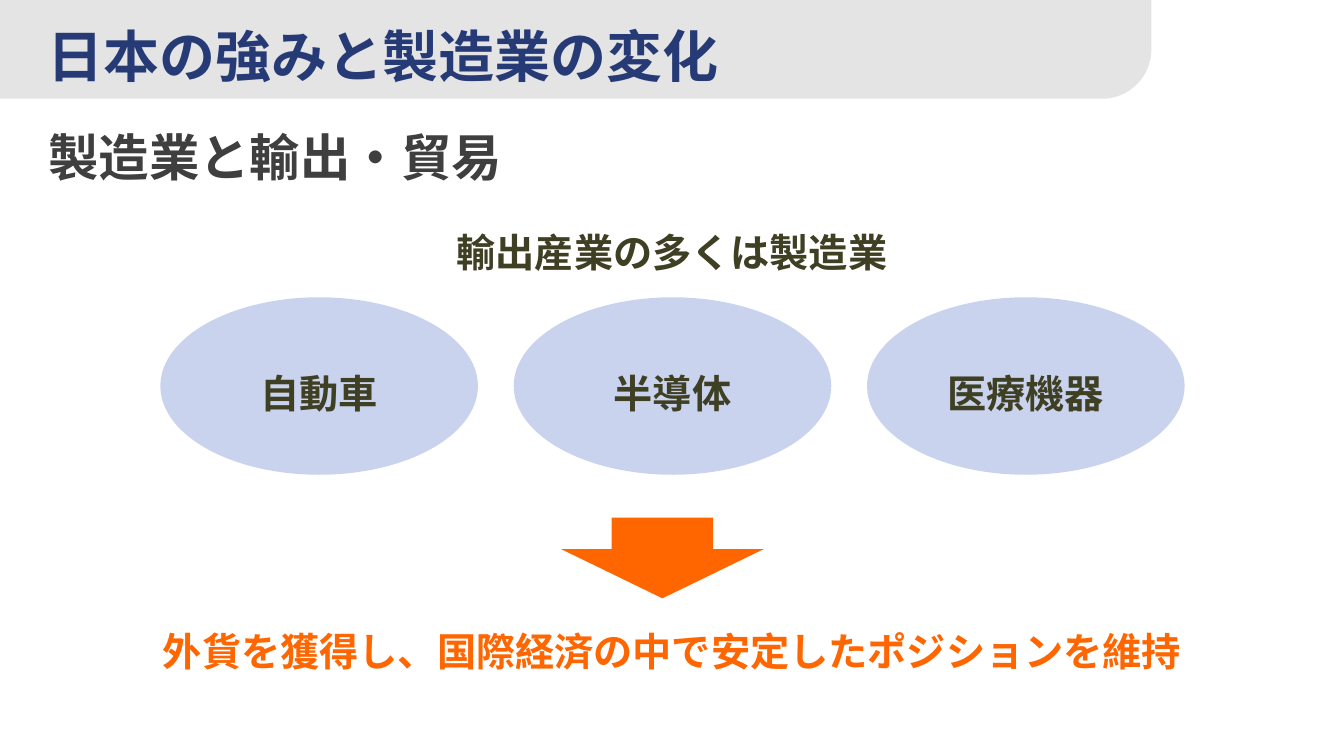
from lxml.etree import SubElement
from pptx import Presentation
from pptx.dml.color import RGBColor
from pptx.enum.shapes import MSO_SHAPE
from pptx.enum.text import MSO_AUTO_SIZE, PP_ALIGN
from pptx.oxml.ns import qn
from pptx.util import Inches, Pt

SLIDE_WIDTH = Inches(13.33)
SLIDE_HEIGHT = Inches(7.5)
FONT_NAME = "Noto Sans CJK JP"

BAND_GREY = RGBColor(0xE4, 0xE4, 0xE4)
TITLE_NAVY = RGBColor(0x26, 0x3B, 0x75)
HEADING_GREY = RGBColor(0x3F, 0x3F, 0x3F)
BODY_OLIVE = RGBColor(0x3F, 0x3F, 0x24)
OVAL_BLUE = RGBColor(0xC9, 0xD3, 0xEE)
ACCENT_ORANGE = RGBColor(0xFF, 0x66, 0x00)

INDUSTRIES = ["自動車", "半導体", "医療機器"]
OVAL_LEFT, OVAL_TOP = 11.93, 39.33
OVAL_WIDTH, OVAL_HEIGHT = 23.63, 23.47
OVAL_PITCH = 26.29
LABEL_WIDTH = 16.43
LABEL_TOP, LABEL_HEIGHT = 45.07, 10


def area(left, top, width, height):
    """Turn percentages of the slide into lengths."""
    return (
        int(SLIDE_WIDTH * left / 100),
        int(SLIDE_HEIGHT * top / 100),
        int(SLIDE_WIDTH * width / 100),
        int(SLIDE_HEIGHT * height / 100),
    )


def add_filled_shape(page, kind, place, color, adjustments=()):
    shape = page.shapes.add_shape(kind, *area(*place))
    shape.shadow.inherit = False
    shape.fill.solid()
    shape.fill.fore_color.rgb = color
    shape.line.fill.background()
    for index, value in enumerate(adjustments):
        shape.adjustments[index] = value
    return shape


def add_label(page, text, place, size, color, align=PP_ALIGN.CENTER, spacing=None):
    box = page.shapes.add_textbox(*area(*place))
    frame = box.text_frame
    frame.word_wrap = True
    frame.auto_size = MSO_AUTO_SIZE.SHAPE_TO_FIT_TEXT
    para = frame.paragraphs[0]
    para.alignment = align
    para.line_spacing = spacing
    span = para.add_run()
    span.text = text
    span.font.size = Pt(size)
    span.font.bold = True
    span.font.color.rgb = color
    span.font.name = FONT_NAME
    SubElement(span.font._element, qn("a:ea"), typeface=FONT_NAME)
    return box


def add_title(page, text):
    band = add_filled_shape(
        page, MSO_SHAPE.ROUND_1_RECTANGLE, (0, 0, 85.67, 13.07), BAND_GREY, [0.5]
    )
    band.element.spPr.xfrm.set("flipV", "1")
    box = add_label(page, text, (2.78, 1.73, 82.9, 10), 40, TITLE_NAVY, PP_ALIGN.LEFT)
    box.text_frame.margin_top = Inches(0.08)
    box.text_frame.margin_bottom = 0


def add_industry(page, column, name):
    left = OVAL_LEFT + column * OVAL_PITCH
    label_left = left + (OVAL_WIDTH - LABEL_WIDTH) / 2
    add_filled_shape(
        page, MSO_SHAPE.OVAL, (left, OVAL_TOP, OVAL_WIDTH, OVAL_HEIGHT), OVAL_BLUE
    )
    add_label(
        page, name, (label_left, LABEL_TOP, LABEL_WIDTH, LABEL_HEIGHT),
        28, BODY_OLIVE, spacing=1.5,
    )


def main():
    deck = Presentation()
    deck.slide_width = SLIDE_WIDTH
    deck.slide_height = SLIDE_HEIGHT
    page = deck.slides.add_slide(deck.slide_layouts[6])

    add_title(page, "日本の強みと製造業の変化")
    add_label(
        page, "製造業と輸出・貿易", (2.85, 16, 87.7, 9.47),
        36, HEADING_GREY, PP_ALIGN.LEFT,
    )
    add_label(page, "輸出産業の多くは製造業", (6.15, 29.6, 87.7, 7.6), 28, BODY_OLIVE)
    for column, name in enumerate(INDUSTRIES):
        add_industry(page, column, name)
    add_filled_shape(
        page, MSO_SHAPE.DOWN_ARROW, (41.75, 68.47, 15.08, 10.67),
        ACCENT_ORANGE, [0.5, 0.61],
    )
    add_label(
        page, "外貨を獲得し、国際経済の中で安定したポジションを維持",
        (6.15, 82.27, 87.7, 7.6), 28, ACCENT_ORANGE,
    )
    deck.save("out.pptx")


if __name__ == "__main__":
    main()
